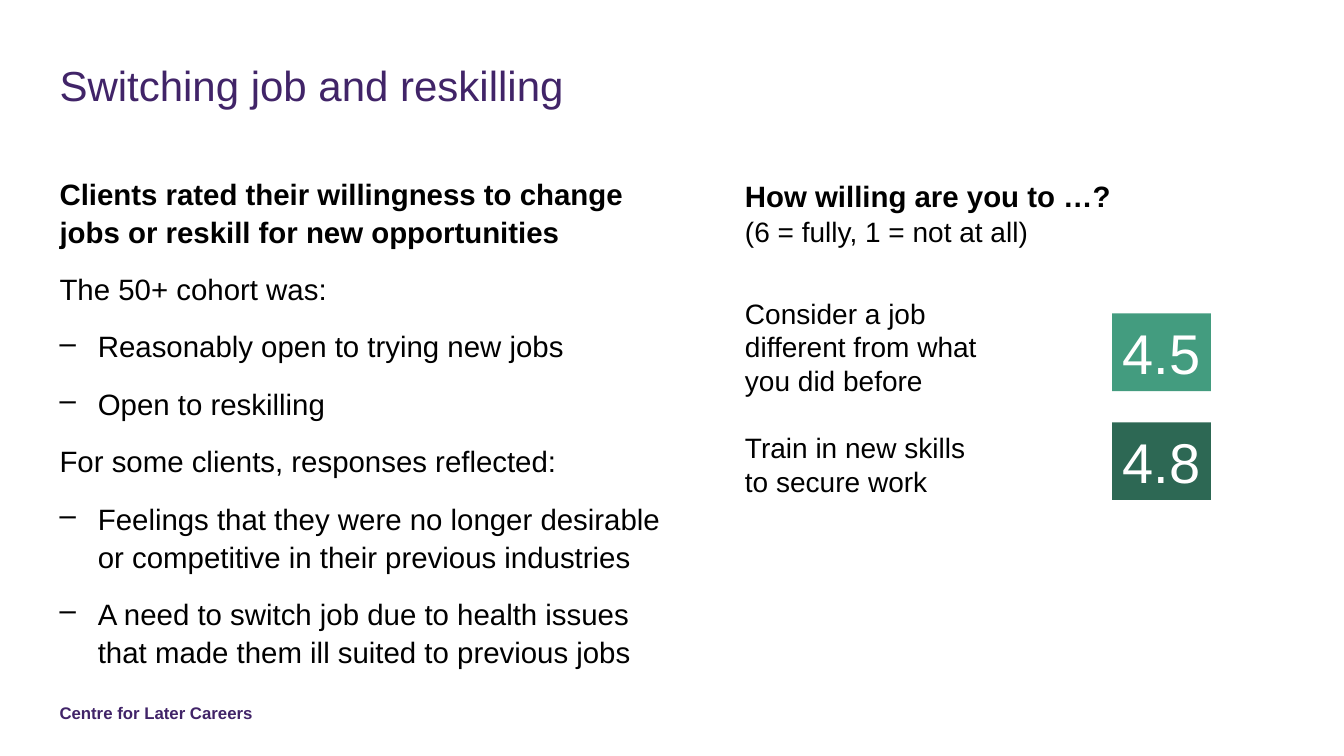
"""Build the slide on switching job and reskilling."""
import dataclasses
import typing

import lxml.etree
import pptx
import pptx.dml.color
import pptx.enum.shapes
import pptx.enum.text
import pptx.oxml.ns
import pptx.presentation
import pptx.slide
import pptx.text.text
import pptx.util

Format = dict[str, typing.Any]


@dataclasses.dataclass(frozen=True)
class Theme:
    """Colours, type sizes and line spacing in points."""
    font: str = "Arial"
    purple: str = "412468"
    black: str = "000000"
    white: str = "FFFFFF"
    light_green: str = "439C7F"
    dark_green: str = "2D6854"
    title: int = 30
    body: int = 21
    label: int = 20
    score: int = 40
    footer: int = 12
    title_line: int = 36
    body_line: int = 27
    heading_line: int = 25
    label_line: int = 24
    body_gap: int = 14


THEME = Theme()
WIDTH = pptx.util.Inches(13.33)
HEIGHT = pptx.util.Inches(7.5)
BULLET_INDENT = pptx.util.Inches(0.38)
LEFT_COLUMN = 4.43
RIGHT_COLUMN = 54.69
CONTENT_TOP = 22.93
SCORE_TOP = 41.47
SCORE_STEP = 14.4


@dataclasses.dataclass(frozen=True)
class Box:
    """A place in percent of the slide's width and height."""
    left: float
    top: float
    width: float
    height: float

    def place(self) -> dict[str, int]:
        """Return the place in slide units."""
        return {
            "left": round(WIDTH * self.left / 100),
            "top": round(HEIGHT * self.top / 100),
            "width": round(WIDTH * self.width / 100),
            "height": round(HEIGHT * self.height / 100),
        }


@dataclasses.dataclass(frozen=True)
class Line:
    """One paragraph and its look."""
    text: str
    size: int = THEME.body
    colour: str = THEME.black
    bold: bool = False
    bullet: bool = False
    layout: Format = dataclasses.field(default_factory=dict)


@dataclasses.dataclass(frozen=True)
class Block:
    """A text box with its paragraphs."""
    box: Box
    lines: list[Line]
    inset: bool = False


@dataclasses.dataclass(frozen=True)
class Score:
    """A rating shown on a filled tile."""
    value: str
    fill: str


def spacing(line: int, before: int = 0, after: int = 0) -> Format:
    """Return paragraph spacing given in points."""
    return {
        "line_spacing": pptx.util.Pt(line),
        "space_before": pptx.util.Pt(before),
        "space_after": pptx.util.Pt(after),
    }


def body_line(text: str, bold: bool = False, bullet: bool = False) -> Line:
    """Return a paragraph of the main text."""
    layout = spacing(THEME.body_line, after=THEME.body_gap)
    return Line(text, bold=bold, bullet=bullet, layout=layout)


TITLE_BOX = Box(LEFT_COLUMN, 7.87, 91.15, 15.07)
TITLE = Line("Switching job and reskilling", THEME.title, THEME.purple, layout={
    **spacing(THEME.title_line), "alignment": pptx.enum.text.PP_ALIGN.LEFT})
BLOCKS = [
    Block(Box(LEFT_COLUMN, 92.93, 26.71, 2.67), [
        Line("Centre for Later Careers", THEME.footer, THEME.purple, bold=True)]),
    Block(Box(LEFT_COLUMN, CONTENT_TOP, 45.61, 67.07), [
        body_line("Clients rated their willingness to change jobs or reskill "
                  "for new opportunities", bold=True),
        body_line("The 50+ cohort was:"),
        body_line("Reasonably open to trying new jobs", bullet=True),
        body_line("Open to reskilling", bullet=True),
        body_line("For some clients, responses reflected:"),
        body_line("Feelings that they were no longer desirable or competitive "
                  "in their previous industries", bullet=True),
        body_line("A need to switch job due to health issues that made them "
                  "ill suited to previous jobs", bullet=True),
    ]),
    Block(Box(RIGHT_COLUMN, CONTENT_TOP, 38.48, 10.53), [
        Line("How willing are you to …?", bold=True, layout=spacing(THEME.heading_line)),
        Line("(6 = fully, 1 = not at all)", THEME.label, layout=spacing(THEME.heading_line)),
    ], inset=True),
    Block(Box(RIGHT_COLUMN, 38.53, 18.9, 32.8), [
        Line("Consider a job different from what you did before", THEME.label,
             layout=spacing(THEME.label_line)),
        Line("Train in new skills to secure work", THEME.label,
             layout=spacing(THEME.label_line, before=THEME.label_line)),
    ], inset=True),
]
SCORES = [Score("4.5", THEME.light_green), Score("4.8", THEME.dark_green)]


def apply(target: object, values: Format) -> None:
    """Set each named attribute on the target."""
    for name, value in values.items():
        setattr(target, name, value)


def add_bullet(paragraph: pptx.text.text._Paragraph) -> None:
    """Give the paragraph a dash and a hanging indent."""
    properties = paragraph._p.get_or_add_pPr()
    properties.set("marL", str(BULLET_INDENT))
    properties.set("indent", str(-BULLET_INDENT))
    bullet = lxml.etree.SubElement(properties, pptx.oxml.ns.qn("a:buChar"))
    bullet.set("char", "–")


def write(frame: pptx.text.text.TextFrame, lines: list[Line], frame_format: Format) -> None:
    """Fill a text frame with formatted paragraphs."""
    apply(frame, frame_format)
    for index, line in enumerate(lines):
        paragraph = frame.add_paragraph() if index else frame.paragraphs[0]
        if line.bullet:
            add_bullet(paragraph)
        apply(paragraph, line.layout)
        run = paragraph.add_run()
        run.text = line.text
        apply(run.font, {"name": THEME.font, "size": pptx.util.Pt(line.size), "bold": line.bold})
        run.font.color.rgb = pptx.dml.color.RGBColor.from_string(line.colour)


def frame_values(inset: bool) -> Format:
    """Return the format of a top-anchored wrapping frame."""
    values: Format = {
        "word_wrap": True,
        "auto_size": pptx.enum.text.MSO_AUTO_SIZE.NONE,
        "vertical_anchor": pptx.enum.text.MSO_ANCHOR.TOP,
    }
    if not inset:
        values |= dict.fromkeys(("margin_left", "margin_top", "margin_right", "margin_bottom"), 0)
    return values


def add_block(slide: pptx.slide.Slide, block: Block) -> None:
    """Draw one text box."""
    shape = slide.shapes.add_textbox(**block.box.place())
    write(shape.text_frame, block.lines, frame_values(block.inset))


def add_score(slide: pptx.slide.Slide, score: Score, row: int) -> None:
    """Draw one rating tile in its row."""
    box = Box(82.75, SCORE_TOP + row * SCORE_STEP, 7.35, 10.27)
    shape = slide.shapes.add_shape(pptx.enum.shapes.MSO_SHAPE.RECTANGLE, **box.place())
    shape.shadow.inherit = False
    shape.fill.solid()
    shape.fill.fore_color.rgb = pptx.dml.color.RGBColor.from_string(score.fill)
    shape.line.fill.background()
    line = Line(score.value, THEME.score, THEME.white,
                layout={"alignment": pptx.enum.text.PP_ALIGN.CENTER})
    write(shape.text_frame, [line], {
        "word_wrap": False, "vertical_anchor": pptx.enum.text.MSO_ANCHOR.MIDDLE})


def main() -> None:
    """Build and save the presentation."""
    presentation: pptx.presentation.Presentation = pptx.Presentation()
    apply(presentation, {"slide_width": WIDTH, "slide_height": HEIGHT})
    slide = presentation.slides.add_slide(presentation.slide_layouts.get_by_name("Title Only"))
    title = slide.shapes.title
    apply(title, TITLE_BOX.place())
    write(title.text_frame, [TITLE], frame_values(inset=False))
    for block in BLOCKS:
        add_block(slide, block)
    for row, score in enumerate(SCORES):
        add_score(slide, score, row)
    presentation.save("out.pptx")


if __name__ == "__main__":
    main()
